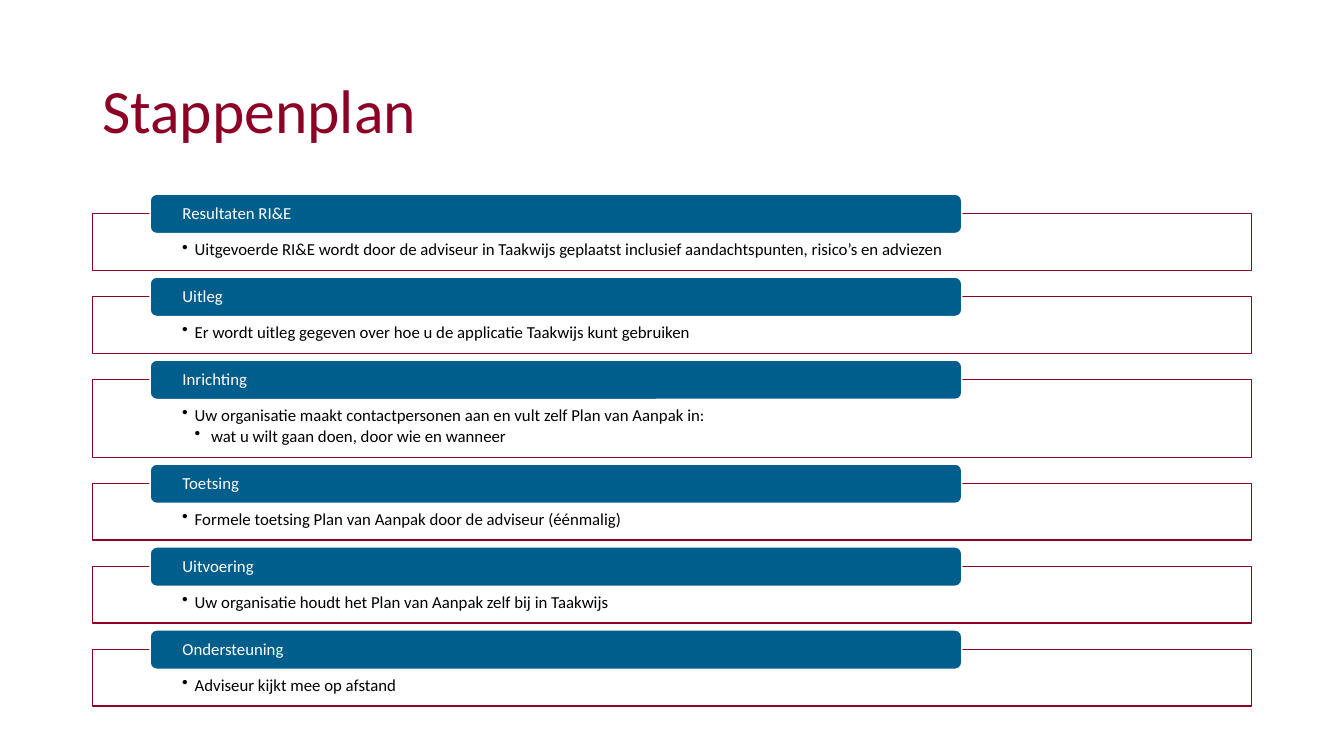
from lxml import etree
from pptx import Presentation
from pptx import util as u
from pptx.dml.color import RGBColor
from pptx.enum import shapes, text
from pptx.oxml import ns

SLIDE_W, SLIDE_H = 2560, 1440
SCALE = 12192000 / SLIDE_W  # EMU per px

BORDEAUX = RGBColor(0x8D, 0x00, 0x26)
BLUE = RGBColor(0x00, 0x5E, 0x8D)
WHITE = RGBColor(0xFF, 0xFF, 0xFF)
BLACK = RGBColor(0x00, 0x00, 0x00)

# Step heading and its points as (level, wording)
STEPS = [
    ("Resultaten RI&E", [(0, "Uitgevoerde RI&E wordt door de adviseur in Taakwijs geplaatst "
                             "inclusief aandachtspunten, risico’s en adviezen")]),
    ("Uitleg", [(0, "Er wordt uitleg gegeven over hoe u de applicatie Taakwijs kunt gebruiken")]),
    ("Inrichting", [(0, "Uw organisatie maakt contactpersonen aan en vult zelf Plan van Aanpak in:"),
                    (1, "wat u wilt gaan doen, door wie en wanneer")]),
    ("Toetsing", [(0, "Formele toetsing Plan van Aanpak door de adviseur (éénmalig)")]),
    ("Uitvoering", [(0, "Uw organisatie houdt het Plan van Aanpak zelf bij in Taakwijs")]),
    ("Ondersteuning", [(0, "Adviseur kijkt mee op afstand")]),
]
FRAME_H, EXTRA_LINE, GAP = 108, 40, 50
BULLET_INDENTS = [(24, 24), (55, 31)]  # left margin and hanging part per level


def px(length):
    return u.Emu(round(length * SCALE))


def set_format(target, values):
    for name, value in values.items():
        setattr(target, name, value)


def set_frame(frame, anchor, left, top, right, bottom):
    set_format(frame, {
        "word_wrap": True, "vertical_anchor": anchor,
        "margin_left": px(left), "margin_top": px(top),
        "margin_right": px(right), "margin_bottom": px(bottom),
    })


def write(paragraph, wording, size, color, after=0):
    set_format(paragraph, {"alignment": text.PP_ALIGN.LEFT, "line_spacing": 0.9,
                           "space_after": u.Pt(after)})
    run = paragraph.add_run()
    run.text = wording
    set_format(run.font, {"name": "Calibri", "size": u.Pt(size)})
    run.font.color.rgb = color


def add_bullet(paragraph, level):
    margin, hanging = BULLET_INDENTS[level]
    paragraph.level = level
    props = paragraph._p.get_or_add_pPr()
    props.set("marL", str(px(margin)))
    props.set("indent", str(-px(hanging)))
    etree.SubElement(props, ns.qn("a:buChar")).set("char", "•")


def add_box(slide, kind, box, fill, line):
    shape = slide.shapes.add_shape(kind, *map(px, box))
    shape.shadow.inherit = False
    shape.fill.solid()
    shape.fill.fore_color.rgb = fill
    shape.line.color.rgb = line
    shape.line.width = u.Pt(1)
    return shape


def add_title(slide, box):
    title = slide.shapes.add_textbox(*map(px, box)).text_frame
    set_frame(title, text.MSO_ANCHOR.MIDDLE, 19, 10, 19, 10)
    write(title.paragraphs[0], "Stappenplan", 44, BORDEAUX)


def add_step(slide, box, heading, points):
    left, top, _, _ = box

    # Outlined frame with the points
    outline = add_box(slide, shapes.MSO_SHAPE.RECTANGLE, box, WHITE, BORDEAUX)
    white = outline.fill._xPr.find(".//" + ns.qn("a:srgbClr"))
    etree.SubElement(white, ns.qn("a:alpha")).set("val", "90000")
    body = outline.text_frame
    set_frame(body, text.MSO_ANCHOR.TOP, 171, 52, 171, 17)
    for index, (level, wording) in enumerate(points):
        paragraph = body.add_paragraph() if index else body.paragraphs[0]
        write(paragraph, wording, 12, BLACK, after=1.8)
        add_bullet(paragraph, level)

    # Heading bar across the top edge
    bar = add_box(slide, shapes.MSO_SHAPE.ROUNDED_RECTANGLE,
                  (left + 110, top - 37, 1546, 75), BLUE, WHITE)
    set_frame(bar.text_frame, text.MSO_ANCHOR.MIDDLE, 58, 0, 58, 0)
    write(bar.text_frame.paragraphs[0], heading, 12, WHITE)


def add_steps(slide, box):
    left, top, width = box
    for heading, points in STEPS:
        height = FRAME_H + EXTRA_LINE * (len(points) - 1)
        add_step(slide, (left, top, width, height), heading, points)
        top += height + GAP


def main():
    deck = Presentation()
    set_format(deck, {"slide_width": px(SLIDE_W), "slide_height": px(SLIDE_H)})
    slide = deck.slides.add_slide(deck.slide_layouts[6])
    add_title(slide, (176, 77, 2208, 278))
    add_steps(slide, (176, 407, 2208))
    deck.save("out.pptx")


if __name__ == "__main__":
    main()
